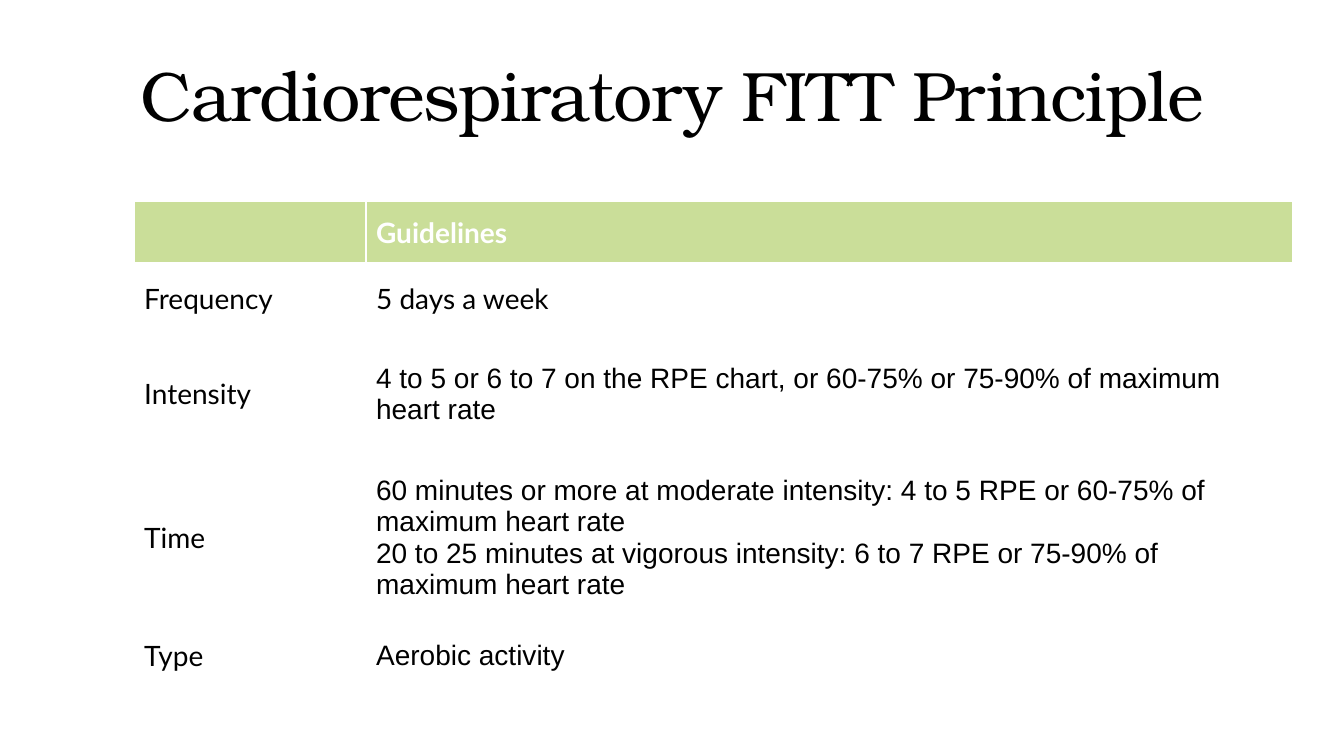
from lxml import etree
from pptx import Presentation
from pptx.dml.color import RGBColor
from pptx.enum.text import MSO_ANCHOR, PP_ALIGN
from pptx.oxml.ns import qn
from pptx.util import Inches, Pt

TOP, MIDDLE = MSO_ANCHOR.TOP, MSO_ANCHOR.MIDDLE
LEFT, CENTER = PP_ALIGN.LEFT, PP_ALIGN.CENTER
BLACK = RGBColor(0x00, 0x00, 0x00)
WHITE = RGBColor(0xFF, 0xFF, 0xFF)
GREEN = RGBColor(0xCA, 0xDE, 0x99)
TITLE_FONT, LABEL_FONT, BODY_FONT = "TeX Gyre Bonum", "Lato", "Arial"

# Content: label, guideline paragraphs, guideline font, row height
TITLE = "Cardiorespiratory FITT Principle"
ROWS = [
    ("", ["Guidelines"], LABEL_FONT, 0.62),
    ("Frequency", ["5 days a week"], LABEL_FONT, 0.69),
    ("Intensity",
     ["4 to 5 or 6 to 7 on the RPE chart, or 60-75% or 75-90% of maximum heart rate"],
     BODY_FONT, 1.2),
    ("Time",
     ["60 minutes or more at moderate intensity: 4 to 5 RPE or 60-75% of maximum heart rate",
      "20 to 25 minutes at vigorous intensity: 6 to 7 RPE or 75-90% of maximum heart rate"],
     BODY_FONT, 1.65),
    ("Type", ["Aerobic activity"], BODY_FONT, 0.69),
]
COLUMN_WIDTHS = [2.3, 9.19]
SLIDE_WIDTH, SLIDE_HEIGHT = 13.33, 7.5
TABLE_LEFT, TABLE_TOP = 1.33, 2


def write_text(text_frame, lines, font, size=20, color=BLACK, bold=False,
               align=LEFT, line_spacing=None, letter_spacing=None):
    for index, line in enumerate(lines):
        paragraph = text_frame.add_paragraph() if index else text_frame.paragraphs[0]
        paragraph.alignment = align
        paragraph.line_spacing = line_spacing
        run = paragraph.add_run()
        run.text = line
        run.font.name = font
        run.font.size = Pt(size)
        run.font.bold = bold
        run.font.color.rgb = color
        if letter_spacing is not None:
            run.font._element.set("spc", str(round(letter_spacing * 100)))


def set_borders(cell, color, **widths):
    properties = cell._tc.get_or_add_tcPr()
    for index, (side, width) in enumerate(widths.items()):
        line = etree.Element(qn(f"a:ln{side}"), w=str(Pt(width)))
        fill = etree.SubElement(line, qn("a:solidFill"))
        etree.SubElement(fill, qn("a:srgbClr"), val=str(color))
        properties.insert(index, line)


def add_title(slide):
    title = slide.shapes.title
    title.left, title.top = 0, Inches(0.56)
    title.width, title.height = Inches(SLIDE_WIDTH), Inches(1.45)
    title.text_frame.word_wrap = True
    title.text_frame.vertical_anchor = TOP
    write_text(title.text_frame, [TITLE], TITLE_FONT, size=50, align=CENTER,
               line_spacing=0.9, letter_spacing=-1)


def add_guidelines_table(slide):
    heights = [row[-1] for row in ROWS]
    table = slide.shapes.add_table(
        len(ROWS), len(COLUMN_WIDTHS), Inches(TABLE_LEFT), Inches(TABLE_TOP),
        Inches(sum(COLUMN_WIDTHS)), Inches(sum(heights))).table
    for column, width in zip(table.columns, COLUMN_WIDTHS):
        column.width = Inches(width)

    for row_index, (label, guidelines, guideline_font, height) in enumerate(ROWS):
        table.rows[row_index].height = Inches(height)
        is_header = row_index == 0
        cell_texts = [([label], LABEL_FONT), (guidelines, guideline_font)]
        for column_index, (lines, font) in enumerate(cell_texts):
            cell = table.cell(row_index, column_index)
            cell.vertical_anchor = MIDDLE
            cell.fill.solid()
            cell.fill.fore_color.rgb = GREEN if is_header else WHITE
            set_borders(cell, WHITE, L=1, R=1, T=3 if row_index == 1 else 1,
                        B=3 if is_header else 1)
            write_text(cell.text_frame, lines, font, bold=is_header,
                       color=WHITE if is_header else BLACK)


def main():
    presentation = Presentation()
    presentation.slide_width = Inches(SLIDE_WIDTH)
    presentation.slide_height = Inches(SLIDE_HEIGHT)
    title_only = presentation.slide_layouts.get_by_name("Title Only")
    slide = presentation.slides.add_slide(title_only)
    add_title(slide)
    add_guidelines_table(slide)
    presentation.save("out.pptx")


if __name__ == "__main__":
    main()
